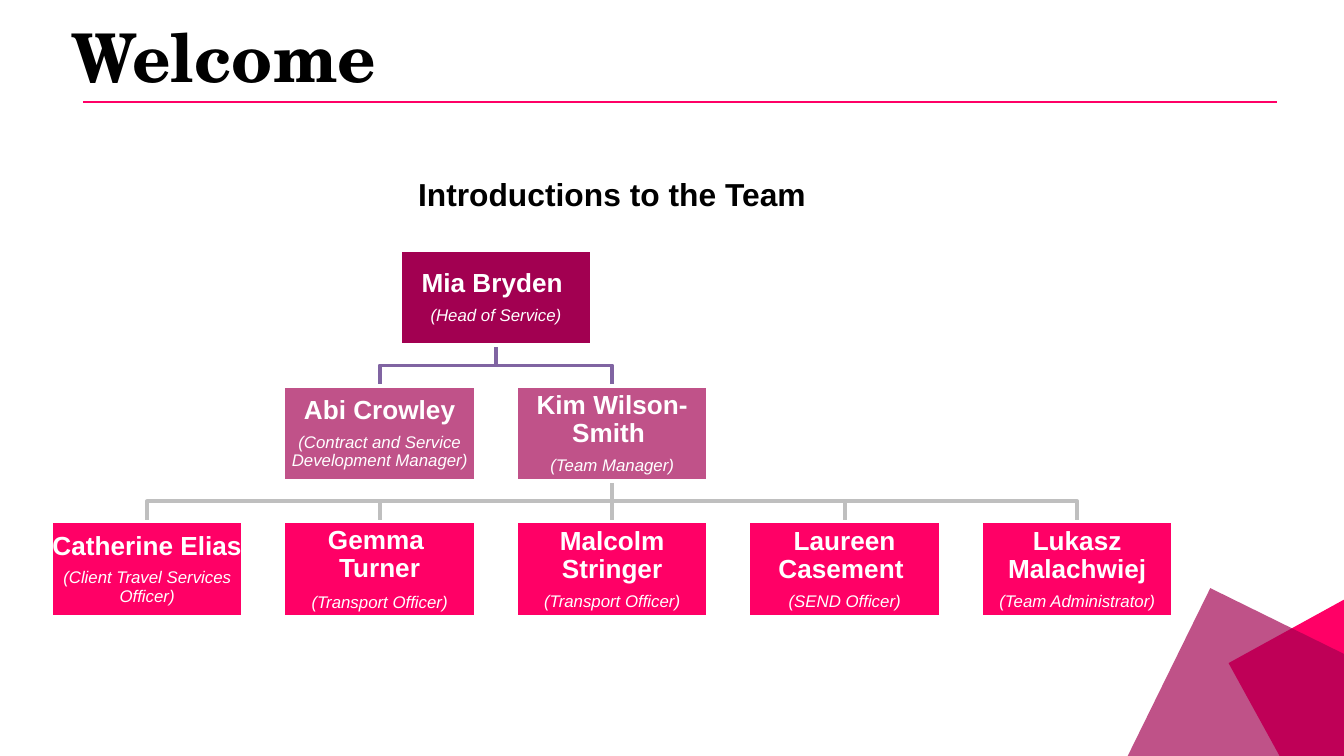
from dataclasses import dataclass
from lxml.etree import SubElement as Sub
from pptx import Presentation
from pptx.dml.color import RGBColor as Rgb
from pptx.enum.shapes import MSO_CONNECTOR as Conn, MSO_SHAPE as Form
from pptx.enum.text import MSO_ANCHOR as Anchor, MSO_AUTO_SIZE as Fit, PP_ALIGN as Align
from pptx.oxml.ns import qn
from pptx.shapes.base import BaseShape as Shape
from pptx.slide import Slide
from pptx.text.text import TextFrame as Frame
from pptx.util import Inches, Pt


@dataclass(frozen=True)
class Theme:
    pink: str = "FF0066"
    wine: str = "A20051"
    rose: str = "C05289"
    grey: str = "BFBFBF"
    plum: str = "8064A2"
    white: str = "FFFFFF"
    black: str = "000000"
    serif: str = "TeX Gyre Schola"
    sans: str = "Arial"
    head: int = 36
    sub: int = 17
    name: int = 14
    role: int = 9


@dataclass(frozen=True)
class Card:
    col: float
    row: int
    names: tuple[str, ...]
    role: str


@dataclass(frozen=True)
class Link:
    start: int
    end: int
    color: str


@dataclass(frozen=True)
class Tile:
    left: float
    top: float
    width: float
    height: float
    turn: float
    color: str
    alpha: int = 100


THEME = Theme()
WIDE, HIGH = 1.43, 0.71
LEFT, TOP = 0.38, 1.86
STEP, DROP = WIDE + 0.3, HIGH + 0.3
FILLS = (THEME.wine, THEME.rose, THEME.pink)

TILES = (
    Tile(9.41, 4.48, 1.5, 1.5, 331.2, THEME.pink),
    Tile(8.63, 4.61, 1.48, 1.54, 296.2, THEME.wine, 68),
)
CARDS = (
    Card(1.5, 0, ("Mia Bryden ",), "(Head of Service)"),
    Card(1, 1, ("Abi Crowley",), "(Contract and Service Development Manager)"),
    Card(2, 1, ("Kim Wilson-Smith ",), "(Team Manager)"),
    Card(0, 2, ("Catherine Elias",), "(Client Travel Services Officer)"),
    Card(1, 2, ("Gemma ", "Turner"), "(Transport Officer)"),
    Card(2, 2, ("Malcolm Stringer",), "(Transport Officer)"),
    Card(3, 2, ("Laureen Casement ",), "(SEND Officer)"),
    Card(4, 2, ("Lukasz Malachwiej",), "(Team Administrator)"),
)
LINKS = (
    *(Link(2, end, THEME.grey) for end in (7, 6, 5, 4, 3)),
    *(Link(0, end, THEME.plum) for end in (2, 1)),
)


def apply(item: object, **values: object) -> None:
    for key, value in values.items():
        setattr(item, key, value)


def stroke(shape: Shape, color: str, width: float) -> None:
    shape.line.color.rgb = Rgb.from_string(color)
    shape.line.width = Pt(width)


def write(frame: Frame, index: int, text: str, size: int, color: str,
          font: dict, **form: object) -> None:
    para = frame.paragraphs[0] if index == 0 else frame.add_paragraph()
    apply(para, **form)
    run = para.add_run()
    run.text = text
    apply(run.font, size=Pt(size), **font)
    run.font.color.rgb = Rgb.from_string(color)


def draw_line(slide: Slide, ends: tuple, color: str, width: float) -> Shape:
    line = slide.shapes.add_connector(Conn.STRAIGHT, *ends)
    stroke(line, color, width)
    Sub(line._element.spPr, qn("a:effectLst"))
    return line


def draw_rect(slide: Slide, box: tuple, color: str) -> Shape:
    rect = slide.shapes.add_shape(Form.RECTANGLE, *map(Inches, box))
    rect.shadow.inherit = False
    rect.fill.solid()
    rect.fill.fore_color.rgb = Rgb.from_string(color)
    rect.line.fill.background()
    return rect


def draw_tile(slide: Slide, tile: Tile) -> None:
    box = (tile.left, tile.top, tile.width, tile.height)
    rect = draw_rect(slide, box, tile.color)
    rect.rotation = tile.turn
    if tile.alpha < 100:
        tint = rect._element.spPr.find(".//" + qn("a:srgbClr"))
        Sub(tint, qn("a:alpha"), val=str(tile.alpha * 1000))


def draw_card(slide: Slide, card: Card) -> Shape:
    box = (LEFT + STEP * card.col, TOP + DROP * card.row, WIDE, HIGH)
    rect = draw_rect(slide, box, FILLS[card.row])
    stroke(rect, THEME.white, 2)
    frame = rect.text_frame
    edges = ("margin_left", "margin_right", "margin_top", "margin_bottom")
    apply(frame, word_wrap=True, vertical_anchor=Anchor.MIDDLE,
          **dict.fromkeys(edges, Inches(0.01)))
    last = len(card.names) - 1
    form = {"alignment": Align.CENTER, "line_spacing": 0.9}
    for index, name in enumerate(card.names):
        gap = 0 if index < last else 4.5 + last
        write(frame, index, name, THEME.name, THEME.white,
              {"name": THEME.sans, "bold": True}, space_after=Pt(gap), **form)
    write(frame, last + 1, card.role, THEME.role, THEME.white,
          {"name": THEME.sans, "bold": False, "italic": True},
          space_after=Pt(3), **form)
    return rect


def draw_link(slide: Slide, link: Link, cards: list[Shape]) -> None:
    start, end = cards[link.start], cards[link.end]
    x1, x2 = (box.left + box.width // 2 for box in (start, end))
    y1, y2 = start.top + start.height, end.top
    if x1 == x2:
        line = draw_line(slide, (x1, y1, x2, y2), link.color, 2)
        line.begin_connect(start, 2)
        line.end_connect(end, 0)
    else:
        mid = (y1 + y2) // 2
        path = slide.shapes.build_freeform(x1, y1)
        path.add_line_segments([(x1, mid), (x2, mid), (x2, y2)], close=False)
        line = path.convert_to_shape()
        line.fill.background()
        line.shadow.inherit = False
        stroke(line, link.color, 2)
    cards[0]._element.addprevious(line._element)


def place(shape: Shape, *box: float) -> None:
    apply(shape, **dict(zip(("left", "top", "width", "height"), map(Inches, box))))


def draw_heads(slide: Slide) -> None:
    title = slide.shapes.title
    place(title, 0.43, 0.18, 2.62, 0.59)
    apply(title.text_frame, word_wrap=False, vertical_anchor=Anchor.TOP,
          auto_size=Fit.SHAPE_TO_FIT_TEXT)
    write(title.text_frame, 0, "Welcome", THEME.head, THEME.black,
          {"name": THEME.serif, "bold": True},
          alignment=Align.LEFT, line_spacing=0.8)
    sub = slide.shapes.add_textbox(*map(Inches, (0.74, 1.25, 7.63, 0.34)))
    sub.text_frame.word_wrap = True
    write(sub.text_frame, 0, "Introductions to the Team", THEME.sub, THEME.black,
          {"name": THEME.sans, "bold": True}, alignment=Align.CENTER)


def main() -> None:
    deck = Presentation()
    apply(deck, slide_width=Inches(10), slide_height=Inches(10) * 9 // 16)
    slide = deck.slides.add_slide(deck.slide_layouts[5])
    draw_line(slide, tuple(map(Inches, (0.62, 0.76, 9.5, 0.76))), THEME.pink, 0.75)
    for tile in TILES:
        draw_tile(slide, tile)
    draw_heads(slide)
    cards = [draw_card(slide, card) for card in CARDS]
    for link in LINKS:
        draw_link(slide, link, cards)
    deck.save("out.pptx")


if __name__ == "__main__":
    main()
